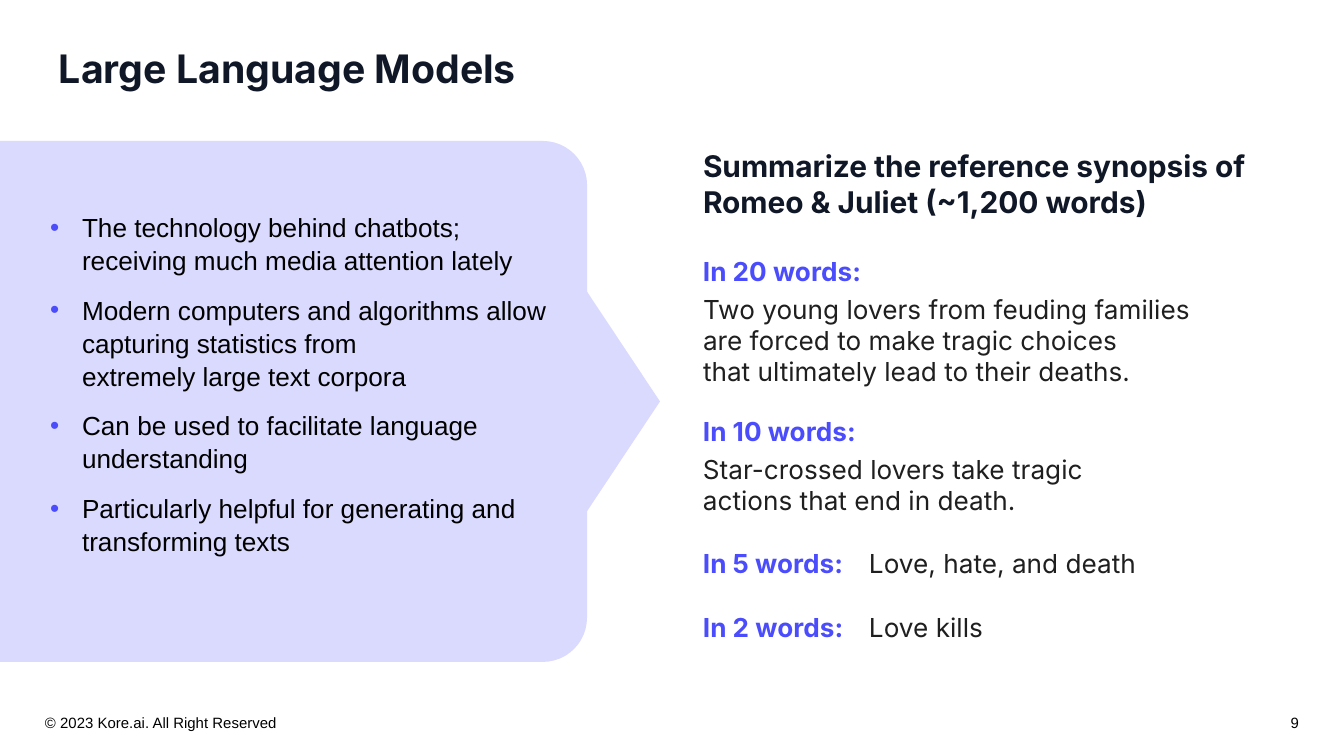
import pptx
import pptx.dml.color
import pptx.enum.shapes
import pptx.enum.text
import pptx.util
from lxml import etree

PX = 914400 / 134.4
INK, VIOLET, LILAC, CHARCOAL, BLACK = "101727", "4B4DFC", "DADAFE", "1F1F1F", "000000"
ALIGN = pptx.enum.text.PP_ALIGN
ANCHOR = pptx.enum.text.MSO_ANCHOR
SHAPE = pptx.enum.shapes.MSO_SHAPE

TECHNOLOGY_POINTS = [
    "The technology behind chatbots; receiving much media attention lately",
    "Modern computers and algorithms allow capturing statistics from\nextremely large text corpora",
    "Can be used to facilitate language understanding",
    "Particularly helpful for generating and transforming texts",
]
STACKED_SUMMARIES = [
    (109, "In 20 words:", "Two young lovers from feuding families are forced to make tragic choices\n"
                          "that ultimately lead to their deaths.", 520, 105),
    (269, "In 10 words:", "Star-crossed lovers take tragic actions that end in death.", 478, 74),
]
INLINE_SUMMARIES = [
    (401, "In 5 words:", "Love, hate, and death"),
    (465, "In 2 words:", "Love kills"),
]


def px(length):
    """Turn pixels into EMU."""
    return pptx.util.Emu(round(length * PX))


def color(value):
    """Turn a hex string into a colour."""
    return pptx.dml.color.RGBColor.from_string(value)


def place(part, left, top, width, height):
    """Move and size a part."""
    part.left, part.top, part.width, part.height = map(px, (left, top, width, height))


def style(paragraph, size, ink, font="Inter", bold=False, align=ALIGN.LEFT):
    """Format a paragraph and its runs."""
    paragraph.alignment = align
    for run in paragraph.runs:
        run.font.name, run.font.size, run.font.bold = font, pptx.util.Pt(size), bold
        run.font.color.rgb = color(ink)


def frame(part, inset_x=9, inset_y=5, anchor=ANCHOR.TOP):
    """Prepare the text frame of a part."""
    text_frame = part.text_frame
    text_frame.word_wrap = True
    text_frame.auto_size = pptx.enum.text.MSO_AUTO_SIZE.NONE
    text_frame.vertical_anchor = anchor
    text_frame.margin_left = text_frame.margin_right = px(inset_x)
    text_frame.margin_top = text_frame.margin_bottom = px(inset_y)
    return text_frame


def add_text(slide, box, text, size, ink, insets=(9, 5), anchor=ANCHOR.TOP, **look):
    """Add a text box with one paragraph."""
    paragraph = frame(slide.shapes.add_textbox(*map(px, box)), *insets, anchor).paragraphs[0]
    paragraph.text = text
    style(paragraph, size, ink, **look)


def add_panel_part(slide, preset, box, adjustments):
    """Add a flat lilac shape."""
    part = slide.shapes.add_shape(preset, *map(px, box))
    for index, value in enumerate(adjustments):
        part.adjustments[index] = value
    part.shadow.inherit = False
    part.fill.solid()
    part.fill.fore_color.rgb = color(LILAC)
    part.line.fill.background()
    return part


def add_bullet(paragraph):
    """Give a paragraph a hanging violet bullet."""
    properties = paragraph._p.get_or_add_pPr()
    properties.set("marL", str(px(32)))
    properties.set("indent", str(-px(32)))
    namespace = "{http://schemas.openxmlformats.org/drawingml/2006/main}"
    bullet_color = etree.SubElement(properties, namespace + "buClr")
    etree.SubElement(bullet_color, namespace + "srgbClr", val=VIOLET)
    etree.SubElement(properties, namespace + "buFont", typeface="Arial")
    etree.SubElement(properties, namespace + "buChar", char="•")


def build_title(slide, left, top, width, height):
    """Fill the title placeholder."""
    title = slide.shapes.title
    place(title, left, top, width, height)
    text_frame = frame(title, anchor=ANCHOR.MIDDLE)
    text_frame.text = "Large Language Models"
    style(text_frame.paragraphs[0], 21, INK, bold=True)


def build_technology(slide, left, top, width, height):
    """Build the pointed panel and its bullet list."""
    add_panel_part(slide, SHAPE.PENTAGON,
                   (left + width - 71, top + 137, 144, 247), [0.57])
    turned_box = (left + (width - height) / 2, top + (height - width) / 2, height, width)
    panel = add_panel_part(slide, SHAPE.ROUND_2_SAME_RECTANGLE, turned_box, [0.085, 0])
    panel.rotation = 90

    points = slide.placeholders[1]
    panel.element.addnext(points.element)
    place(points, left + 50, top + 69, 497, 384)
    text_frame = frame(points, 0, 0)
    for index, point in enumerate(TECHNOLOGY_POINTS):
        paragraph = text_frame.add_paragraph() if index else text_frame.paragraphs[0]
        paragraph.text = point
        add_bullet(paragraph)
        paragraph.line_spacing = 1.05
        paragraph.space_before = pptx.util.Pt(9 if index else 0)
        style(paragraph, 14, BLACK, font="Arial")


def build_summaries(slide, left, top, width, height):
    """Build the heading and the ever shorter summaries."""
    add_text(slide, (left - 4, top, width, 86),
             "Summarize the reference synopsis of Romeo & Juliet (~1,200 words)",
             16, INK, insets=(13, 7), bold=True)
    for offset, label, summary, summary_width, summary_height in STACKED_SUMMARIES:
        add_text(slide, (left, top + offset, 220, 42), label, 14, VIOLET, bold=True)
        add_text(slide, (left, top + offset + 38, summary_width, summary_height),
                 summary, 14, CHARCOAL)
    for offset, label, summary in INLINE_SUMMARIES:
        add_text(slide, (left, top + offset, 160, 42), label, 14, VIOLET, bold=True)
        add_text(slide, (left + 166, top + offset, 348, 42), summary, 14, CHARCOAL)


def build_footer(slide, left, top, width, height):
    """Build the copyright line and the page number."""
    add_text(slide, (left, top, 415, height), "© 2023 Kore.ai. All Right Reserved",
             8, BLACK, anchor=ANCHOR.BOTTOM, font="Arial")
    add_text(slide, (left + width - 101, top, 101, height), "9",
             8, BLACK, anchor=ANCHOR.BOTTOM, font="Arial", align=ALIGN.RIGHT)


def main():
    """Build and save the slide."""
    presentation = pptx.Presentation()
    presentation.slide_width, presentation.slide_height = px(1344), px(756)
    slide = presentation.slides.add_slide(presentation.slide_layouts[1])
    build_technology(slide, 0, 141, 587, 521)
    build_title(slide, 50, 23, 1218, 89)
    build_summaries(slide, 694, 141, 573, 507)
    build_footer(slide, 36, 706, 1272, 30)
    presentation.save("out.pptx")


if __name__ == "__main__":
    main()
